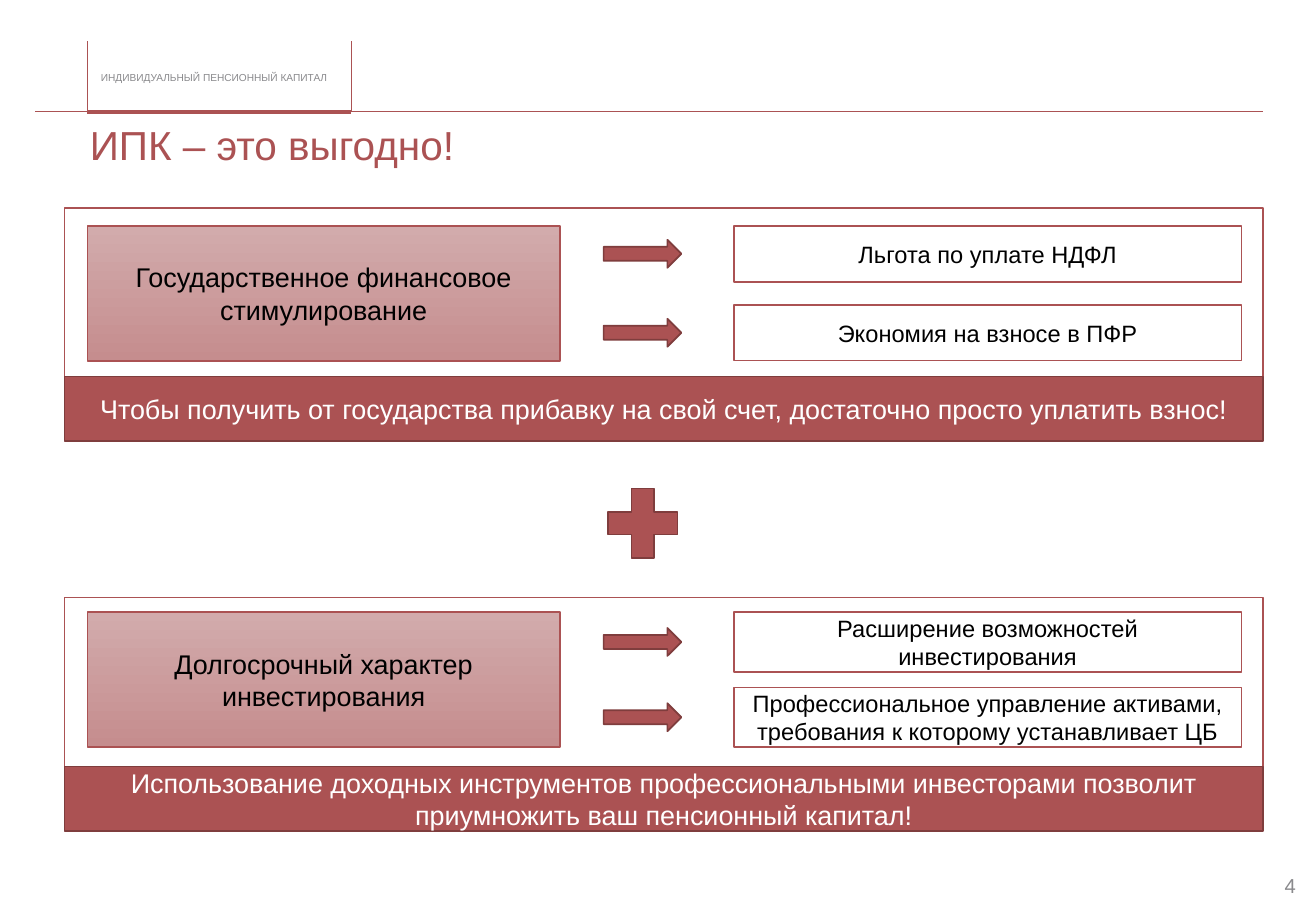
from dataclasses import dataclass

from lxml import etree
from pptx import Presentation
from pptx.dml.color import RGBColor as RGB
from pptx.enum.shapes import MSO_CONNECTOR as Connector, MSO_SHAPE as Shape
from pptx.enum.text import MSO_ANCHOR as Anchor, PP_ALIGN as Align
from pptx.oxml.ns import qn
from pptx.util import Pt


@dataclass(frozen=True)
class Theme:
    font: str = "Arial"
    red: RGB = RGB(0xAB, 0x52, 0x53)
    dark_red: RGB = RGB(0x7F, 0x3D, 0x3D)
    pink_top: RGB = RGB(0xD2, 0xAB, 0xAC)
    pink_bottom: RGB = RGB(0xC5, 0x8D, 0x8E)
    gray: RGB = RGB(0x8A, 0x8A, 0x8D)
    black: RGB = RGB(0, 0, 0)
    white: RGB = RGB(0xFF, 0xFF, 0xFF)
    section_size: int = 6
    number_size: int = 12
    benefit_size: int = 14
    body_size: int = 16
    title_size: int = 24


THEME = Theme()

# Shared columns and heights, in points
FRAME_LEFT, FRAME_WIDTH, FRAME_HEIGHT = 38.2, 710.6, 100.1
BANNER_HEIGHT = 38.2
REASON_LEFT, REASON_WIDTH, REASON_HEIGHT = 51.8, 280.1, 79.9
ARROW_LEFT, ARROW_WIDTH, ARROW_HEIGHT = 357.8, 46.1, 16.6
BENEFIT_LEFT, BENEFIT_WIDTH = 434.9, 301

PANELS = [
    dict(top=123.1, reason_top=133.9, benefit_height=33.1,
         reason="Государственное финансовое стимулирование",
         benefits=["Льгота по уплате НДФЛ", "Экономия на взносе в ПФР"],
         conclusion="Чтобы получить от государства прибавку на свой счет, "
                    "достаточно просто уплатить взнос!"),
    dict(top=354.2, reason_top=362.9, benefit_height=35.3,
         reason="Долгосрочный характер инвестирования",
         benefits=["Расширение возможностей инвестирования",
                   "Профессиональное управление активами, "
                   "требования к которому устанавливает ЦБ"],
         conclusion="Использование доходных инструментов профессиональными "
                    "инвесторами позволит приумножить ваш пенсионный капитал!"),
]


def write(holder, text, *, size, color, align=Align.CENTER, spacing=None):
    frame = holder.text_frame
    frame.word_wrap = True
    frame.vertical_anchor = Anchor.MIDDLE
    paragraph = frame.paragraphs[0]
    paragraph.alignment = align
    if spacing:
        paragraph.line_spacing = spacing
    run = paragraph.add_run()
    run.text = text
    run.font.name = THEME.font
    run.font.size = Pt(size)
    run.font.color.rgb = color


def add_label(slide, box, text, **text_format):
    label = slide.shapes.add_textbox(*map(Pt, box))
    frame = label.text_frame
    frame.margin_left = frame.margin_right = 0
    frame.margin_top = frame.margin_bottom = 0
    write(label, text, **text_format)


def add_figure(slide, kind, box, fill, outline):
    figure = slide.shapes.add_shape(kind, *map(Pt, box))
    figure.shadow.inherit = False
    figure.line.color.rgb = outline
    figure.line.width = Pt(1)
    if isinstance(fill, list):
        figure.fill.gradient()
        figure.fill.gradient_angle = 270
        for stop, color in zip(figure.fill.gradient_stops, fill):
            stop.color.rgb = color
    else:
        figure.fill.solid()
        figure.fill.fore_color.rgb = fill
    return figure


def add_rule(slide, start, end, width=0.25):
    rule = slide.shapes.add_connector(Connector.STRAIGHT, *map(Pt, start + end))
    rule.line.color.rgb = THEME.red
    rule.line.width = Pt(width)
    etree.SubElement(rule.line._get_or_add_ln().getparent(), qn("a:effectLst"))


def add_header(slide):
    # Section tab standing on the header rule
    left, right, top, base = 51.8, 208.1, 24.5, 66.6
    add_rule(slide, (20.9, 66.2), (left, 66.2))
    add_rule(slide, (left, base), (right, base), width=2.25)
    add_rule(slide, (right, 66.2), (748.8, 66.2))
    for side in (left, right):
        add_rule(slide, (side, top), (side, base))
    add_label(slide, (59.8, 42.5, 146.2, 7.2), "ИНДИВИДУАЛЬНЫЙ ПЕНСИОННЫЙ КАПИТАЛ",
              size=THEME.section_size, color=THEME.gray, align=Align.LEFT)

    # Title
    add_label(slide, (53.3, 67, 695.5, 40.3), "ИПК – это выгодно!",
              size=THEME.title_size, color=THEME.red, align=Align.LEFT, spacing=0.9)


def add_panel(slide, top, reason_top, benefit_height, reason, benefits, conclusion):
    # Frame
    add_figure(slide, Shape.RECTANGLE, (FRAME_LEFT, top, FRAME_WIDTH, FRAME_HEIGHT),
               THEME.white, THEME.red)

    # Reason on the left
    reason_box = add_figure(slide, Shape.RECTANGLE,
                            (REASON_LEFT, reason_top, REASON_WIDTH, REASON_HEIGHT),
                            [THEME.pink_top, THEME.pink_bottom], THEME.red)
    write(reason_box, reason, size=THEME.body_size, color=THEME.black)

    # Benefits level with the top and bottom of the reason, each with its arrow
    step = REASON_HEIGHT - benefit_height
    for row, benefit in enumerate(benefits):
        benefit_top = reason_top + row * step
        arrow_top = benefit_top + (benefit_height - ARROW_HEIGHT) / 2
        add_figure(slide, Shape.RIGHT_ARROW,
                   (ARROW_LEFT, arrow_top, ARROW_WIDTH, ARROW_HEIGHT),
                   THEME.red, THEME.dark_red)
        benefit_box = add_figure(slide, Shape.RECTANGLE,
                                 (BENEFIT_LEFT, benefit_top, BENEFIT_WIDTH, benefit_height),
                                 THEME.white, THEME.red)
        write(benefit_box, benefit, size=THEME.benefit_size, color=THEME.black)

    # Conclusion under the frame
    banner = add_figure(slide, Shape.RECTANGLE,
                        (FRAME_LEFT, top + FRAME_HEIGHT, FRAME_WIDTH, BANNER_HEIGHT),
                        THEME.red, THEME.dark_red)
    write(banner, conclusion, size=THEME.body_size, color=THEME.white)


def main():
    deck = Presentation()
    deck.slide_width, deck.slide_height = Pt(780), Pt(540)
    slide = deck.slides.add_slide(deck.slide_layouts[6])

    add_header(slide)
    for panel in PANELS:
        add_panel(slide, **panel)

    # Plus sign between the panels
    add_figure(slide, Shape.MATH_PLUS, (352.8, 282.2, 56.2, 56.2),
               THEME.red, THEME.dark_red)

    # Slide number
    add_label(slide, (749.5, 510.5, 30.5, 28.8), "4",
              size=THEME.number_size, color=THEME.gray)

    deck.save("out.pptx")


if __name__ == "__main__":
    main()
